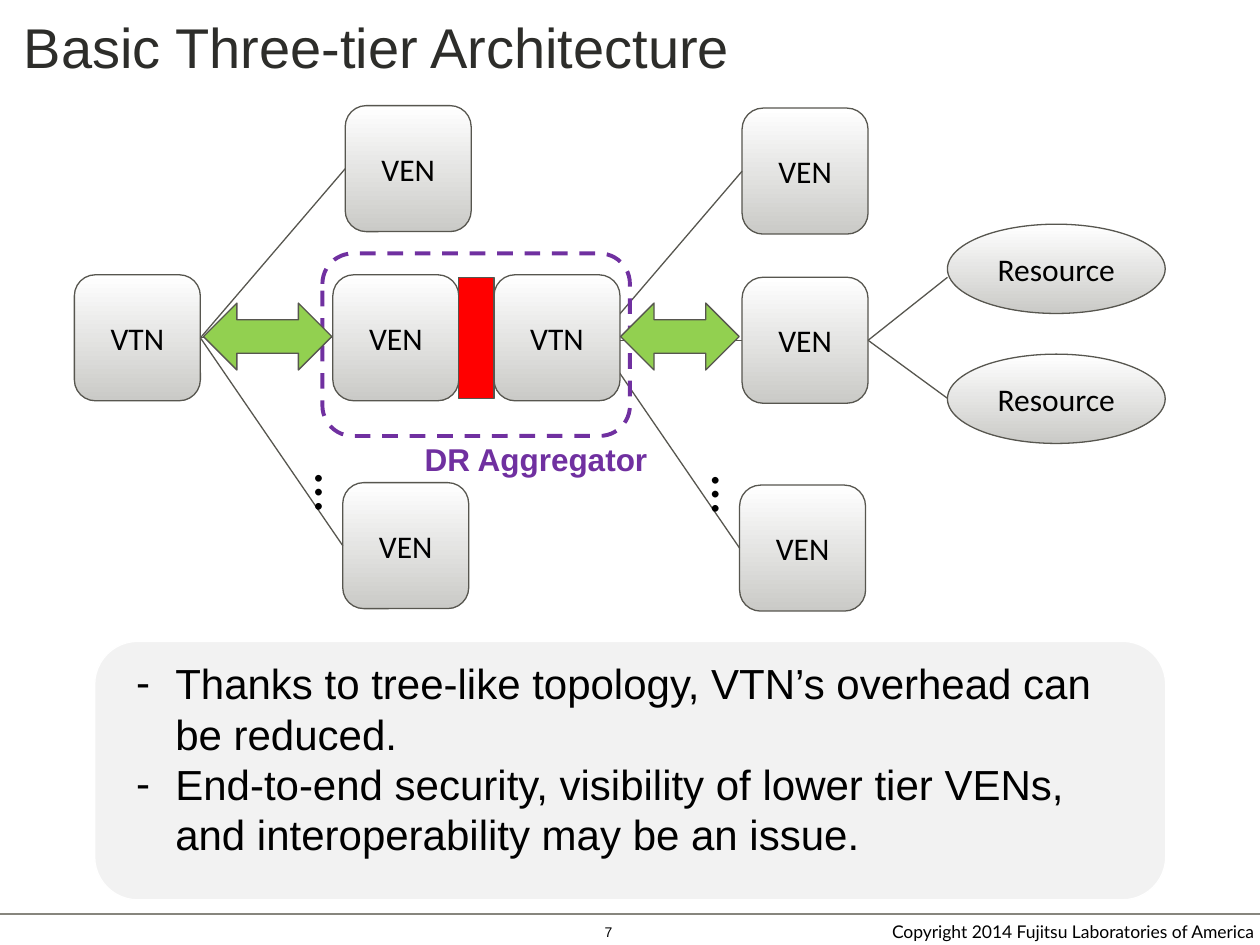
from lxml.etree import SubElement
from pptx import Presentation
from pptx.dml.color import RGBColor
from pptx.enum.dml import MSO_LINE
from pptx.enum.shapes import MSO_CONNECTOR, MSO_SHAPE as SHAPE
from pptx.enum.text import MSO_ANCHOR as ANCHOR, MSO_AUTO_SIZE as AUTOSIZE, PP_ALIGN as ALIGN
from pptx.oxml.ns import qn
from pptx.util import Cm, Pt

COLORS = {
    "title": "2D2D2A",
    "text": "000000",
    "outline": "57564F",
    "rule": "87867E",
    "node_top": "FFFFFF",
    "node_bottom": "CACAC7",
    "panel": "F2F2F2",
    "panel_edge": "FFFFFF",
    "aggregator": "7030A0",
    "barrier": "FF0000",
    "arrow": "92D050",
}
NODE = 2.54
LEFT, RIGHT = 1, 3


def rgb(name):
    return RGBColor.from_string(COLORS[name])


def set_font(paragraph, face, size, color="text", bold=None):
    font = paragraph.font
    font.name, font.size, font.bold = face, Pt(size), bold
    font.color.rgb = rgb(color)


def set_insets(frame, size):
    frame.margin_left = frame.margin_right = Cm(size)
    frame.margin_top = frame.margin_bottom = Cm(size)


def place(shape, left, top, width, height):
    shape.left, shape.top, shape.width, shape.height = map(Cm, (left, top, width, height))


def add_outlined(slide, kind, box, fill=None, line="outline", weight=0.75):
    shape = slide.shapes.add_shape(kind, *map(Cm, box))
    shape.shadow.inherit = False
    if fill:
        shape.fill.solid()
        shape.fill.fore_color.rgb = rgb(fill)
    else:
        shape.fill.background()
    shape.line.color.rgb = rgb(line)
    shape.line.width = Pt(weight)
    return shape


def add_node(slide, label, left, top, kind=SHAPE.ROUNDED_RECTANGLE, width=NODE, height=NODE):
    node = add_outlined(slide, kind, (left, top, width, height))
    node.fill.gradient()
    node.fill.gradient_angle = 270
    for stop, color in zip(node.fill.gradient_stops, ("node_top", "node_bottom")):
        stop.color.rgb = rgb(color)
    frame = node.text_frame
    frame.word_wrap = False
    frame.vertical_anchor = ANCHOR.MIDDLE
    paragraph = frame.paragraphs[0]
    paragraph.text = label
    paragraph.alignment = ALIGN.CENTER
    set_font(paragraph, "Calibri", 18)
    return node


def add_line(slide, start, end, color="outline", weight=0.75, source=None, target=None):
    line = slide.shapes.add_connector(MSO_CONNECTOR.STRAIGHT, *map(Cm, start + end))
    line.line.color.rgb = rgb(color)
    line.line.width = Pt(weight)
    SubElement(line.element.spPr, qn("a:effectLst"))
    if source:
        line.begin_connect(source, RIGHT)
    if target:
        line.end_connect(target, LEFT)


def add_text(slide, text, box, face, size, color="text", bold=None, wrap=True):
    textbox = slide.shapes.add_textbox(*map(Cm, box))
    frame = textbox.text_frame
    frame.word_wrap = wrap
    paragraph = frame.paragraphs[0]
    paragraph.text = text
    set_font(paragraph, face, size, color, bold)
    return textbox


def add_tier(slide, hub, ven_places, dots_place, vtn=None):
    for left, top in ven_places:
        ven = add_node(slide, "VEN", left, top)
        add_line(slide, hub, (left, top + NODE / 2), source=vtn, target=ven)
    dots = add_text(slide, "…", dots_place + (1.02, 1.63), "Calibri", 32)
    dots.text_frame.auto_size = AUTOSIZE.SHAPE_TO_FIT_TEXT
    dots.rotation = 90
    return ven


def add_arrow(slide, left, top, length):
    arrow = add_outlined(slide, SHAPE.UP_DOWN_ARROW, (left, top, 1.35, length), "arrow")
    arrow.rotation = 90


def fill_title(slide):
    title = slide.shapes.title
    place(title, 0.48, 0.1, 22.23, 1.65)
    frame = title.text_frame
    set_insets(frame, 0)
    frame.vertical_anchor = ANCHOR.MIDDLE
    heading = frame.paragraphs[0]
    heading.text = "Basic Three-tier Architecture"
    heading.alignment = ALIGN.LEFT
    set_font(heading, "Arial", 32, "title")


def fill_remarks(slide, remarks):
    body = slide.placeholders[1]
    place(body, 2.49, 13.13, 20.8, 4.37)
    panel = add_outlined(slide, SHAPE.ROUNDED_RECTANGLE, (1.91, 12.93, 21.59, 5.21), "panel", "panel_edge")
    body.element.addprevious(panel.element)
    frame = body.text_frame
    frame.auto_size = AUTOSIZE.SHAPE_TO_FIT_TEXT
    frame.text = "\n".join(remarks)
    for paragraph in frame.paragraphs:
        properties = paragraph._p.get_or_add_pPr()
        properties.set("marL", str(Cm(0.79)))
        properties.set("indent", str(-Cm(0.79)))
        SubElement(properties, qn("a:buChar"), char="-")
        paragraph.space_before = Pt(0)
        set_font(paragraph, "Arial", 24)


def add_aggregator(slide):
    border = add_outlined(slide, SHAPE.ROUNDED_RECTANGLE, (6.5, 5.11, 6.2, 3.68), line="aggregator", weight=2.25)
    border.line.dash_style = MSO_LINE.DASH
    add_text(slide, "DR Aggregator", (8.31, 8.74, 5.05, 1.02), "Arial", 18, "aggregator", True, False)
    add_node(slide, "VTN", 9.96, 5.54)
    add_outlined(slide, SHAPE.RECTANGLE, (9.25, 5.59, 0.71, 2.44), "barrier")


def add_footer(slide):
    add_line(slide, (0, 18.42), (25.4, 18.42), "rule", 1)
    copyright_line = add_text(slide, "Copyright 2014 Fujitsu Laboratories of America",
                              (14.1, 18.49, 11.18, 0.56), "Lato", 10, wrap=False)
    frame = copyright_line.text_frame
    set_insets(frame, 0)
    frame.vertical_anchor = ANCHOR.MIDDLE
    frame.paragraphs[0].alignment = ALIGN.RIGHT
    add_text(slide, "7", (11.94, 18.49, 1.5, 0.56), "Arial", 8)


def main():
    deck = Presentation()
    deck.slide_width, deck.slide_height = Cm(25.4), Cm(19.05)
    slide = deck.slides.add_slide(deck.slide_layouts[1])
    fill_title(slide)
    fill_remarks(slide, [
        "Thanks to tree-like topology, VTN’s overhead can be reduced.",
        "End-to-end security, visibility of lower tier VENs, and interoperability may be an issue.",
    ])
    add_footer(slide)

    root = add_node(slide, "VTN", 1.5, 5.54)
    add_tier(slide, (4.04, 6.81), [(6.96, 2.13), (6.91, 9.73), (6.71, 5.54)], (6.29, 8.99), root)
    relay = add_tier(slide, (12.04, 6.86), [(14.96, 2.18), (14.91, 9.78), (14.96, 5.59)], (14.29, 9.04))
    for top, joint in ((4.52, 5.59), (7.14, 8.03)):
        add_node(slide, "Resource", 19.1, top, SHAPE.OVAL, 4.39, 1.8)
        add_line(slide, (17.5, 6.86), (19.1, joint), source=relay)

    add_aggregator(slide)
    add_arrow(slide, 4.72, 5.49, 2.59)
    add_arrow(slide, 13.03, 5.59, 2.39)
    deck.save("out.pptx")


if __name__ == "__main__":
    main()
